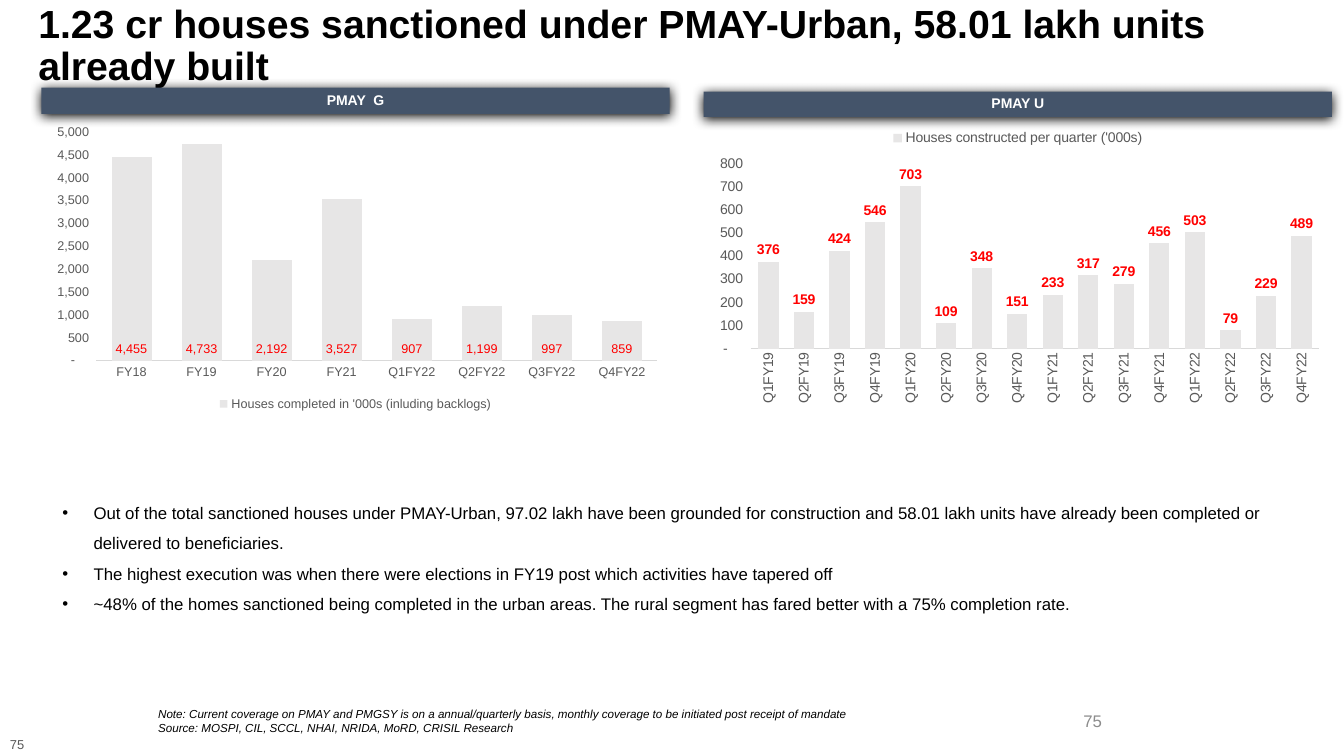
"""Builds the housing progress slide with two column charts and a commentary."""
from dataclasses import dataclass

from lxml import etree
from pptx import Presentation
from pptx import util as u
from pptx.chart.data import CategoryChartData
from pptx.dml.color import RGBColor
from pptx.enum import chart as ch, shapes, text
from pptx.oxml.ns import qn


@dataclass(frozen=True)
class Theme:
    font: str = "Arial"
    ink: str = "000000"
    white: str = "FFFFFF"
    muted: str = "595959"
    pale: str = "8C8C8C"
    banner: str = "44546A"
    column: str = "E7E6E6"
    axis: str = "D9D9D9"
    value: str = "FF0000"
    title_size: float = 28
    body_size: float = 12
    label_size: float = 10
    small_size: float = 9
    corner_size: float = 9.2
    note_size: float = 8.3


@dataclass(frozen=True)
class Area:
    """Left, top, width and height in percent of the slide."""
    left: float
    top: float
    width: float
    height: float

    def lengths(self) -> tuple[int, int, int, int]:
        return (int(WIDTH * self.left / 100), int(HEIGHT * self.top / 100),
                int(WIDTH * self.width / 100), int(HEIGHT * self.height / 100))


@dataclass(frozen=True)
class Style:
    size: float
    color: str
    bold: bool = False
    italic: bool = False


@dataclass(frozen=True)
class TextBlock:
    area: Area
    lines: tuple[str, ...]
    style: Style
    align: text.PP_ALIGN = text.PP_ALIGN.LEFT
    anchor: text.MSO_ANCHOR = text.MSO_ANCHOR.TOP
    wrap: bool = True
    bulleted: bool = False


@dataclass(frozen=True)
class Scheme:
    """One housing scheme: its banner and its column chart."""
    name: str
    banner: Area
    plot: Area
    series: str
    houses: dict[str, int]
    maximum: int
    step: int
    number_format: str
    legend: ch.XL_LEGEND_POSITION
    labels: ch.XL_LABEL_POSITION
    axis_style: Style
    label_style: Style
    rotation: int


THEME = Theme()
WIDTH, HEIGHT = u.Inches(13.33), u.Inches(7.5)
LEFT_COLUMN, RIGHT_COLUMN, COLUMN_WIDTH = 3.08, 52.36, 46.74
CHART_TOP = 15.73
HANGING = u.Inches(0.31)

TITLE = TextBlock(
    Area(2.85, -10.93, 93.92, 34.27),
    ("1.23 cr houses sanctioned under PMAY-Urban, 58.01 lakh units already built",),
    Style(THEME.title_size, THEME.ink, bold=True), anchor=text.MSO_ANCHOR.MIDDLE)

QUARTERS = [f"Q{quarter}FY{year}" for year in range(19, 23) for quarter in range(1, 5)]
RURAL_PERIODS = ["FY18", "FY19", "FY20", "FY21", *QUARTERS[-4:]]

SCHEMES = (
    Scheme("PMAY U", Area(RIGHT_COLUMN, 12.13, COLUMN_WIDTH, 3.33),
           Area(RIGHT_COLUMN, CHART_TOP, COLUMN_WIDTH, 38.4),
           "Houses constructed per quarter ('000s)",
           dict(zip(QUARTERS, (376, 159, 424, 546, 703, 109, 348, 151,
                               233, 317, 279, 456, 503, 79, 229, 489))),
           800, 100, '_(* #,##0_);_(* \\(#,##0\\);_(* "-"??_);_(',
           ch.XL_LEGEND_POSITION.TOP, ch.XL_LABEL_POSITION.OUTSIDE_END,
           Style(THEME.label_size, THEME.muted),
           Style(THEME.label_size, THEME.value, bold=True), -90),
    Scheme("PMAY  G", Area(LEFT_COLUMN, 11.6, COLUMN_WIDTH, 3.47),
           Area(LEFT_COLUMN, CHART_TOP, COLUMN_WIDTH, 39.2),
           "Houses completed in '000s (inluding backlogs)",
           dict(zip(RURAL_PERIODS, (4455, 4733, 2192, 3527, 907, 1199, 997, 859))),
           5000, 500, '_ * #,##0_ ;_ * \\-#,##0_ ;_ * "-"??_ ;_ ',
           ch.XL_LEGEND_POSITION.BOTTOM, ch.XL_LABEL_POSITION.INSIDE_BASE,
           Style(THEME.small_size, THEME.muted),
           Style(THEME.small_size, THEME.value), 0),
)

TEXT_BLOCKS = (
    TextBlock(Area(0, 96.8, 2.7, 3.47), ("75",),
              Style(THEME.corner_size, THEME.muted), wrap=False),
    TextBlock(Area(60.24, 92.67, 22.5, 5.33), ("75",),
              Style(THEME.body_size, THEME.pale), text.PP_ALIGN.RIGHT, text.MSO_ANCHOR.MIDDLE),
    TextBlock(Area(11.03, 92.8, 53.71, 5.07),
              ("Note: Current coverage on PMAY and PMGSY is on a annual/quarterly basis, "
               "monthly coverage to be initiated post receipt of mandate",
               "Source: MOSPI, CIL, SCCL, NHAI, NRIDA, MoRD, CRISIL Research"),
              Style(THEME.note_size, THEME.ink, italic=True), wrap=False),
    TextBlock(Area(3.9, 64.53, 95.2, 17.07),
              ("Out of the total sanctioned houses under PMAY-Urban, 97.02 lakh have been grounded "
               "for construction and 58.01 lakh units have already been completed or delivered "
               "to beneficiaries.",
               "The highest execution was when there were elections in FY19 post which activities "
               "have tapered off",
               "~48% of the homes sanctioned being completed in the urban areas. The rural segment "
               "has fared better with a 75% completion rate."),
              Style(THEME.body_size, THEME.ink), bulleted=True),
)


def apply_style(font, style: Style) -> None:
    font.name, font.size = THEME.font, u.Pt(style.size)
    font.bold, font.italic = style.bold, style.italic
    font.color.rgb = RGBColor.from_string(style.color)


def add_bullet(paragraph) -> None:
    properties = paragraph._p.get_or_add_pPr()
    properties.set("marL", str(HANGING))
    properties.set("indent", str(-HANGING))
    etree.SubElement(properties, qn("a:buFont"), typeface=THEME.font)
    etree.SubElement(properties, qn("a:buChar"), char="•")


def write(frame, block: TextBlock, spacing: float = 1.0) -> None:
    frame.text = "\n".join(block.lines)
    frame.word_wrap, frame.vertical_anchor = block.wrap, block.anchor
    frame.auto_size = text.MSO_AUTO_SIZE.NONE if block.wrap else text.MSO_AUTO_SIZE.SHAPE_TO_FIT_TEXT
    for paragraph in frame.paragraphs:
        if block.bulleted:
            add_bullet(paragraph)
        paragraph.alignment, paragraph.line_spacing = block.align, spacing
        for run in paragraph.runs:
            apply_style(run.font, block.style)


def add_title(slide) -> None:
    title = slide.shapes.title
    title.left, title.top, title.width, title.height = TITLE.area.lengths()
    frame = title.text_frame
    frame.margin_left = frame.margin_right = frame.margin_top = frame.margin_bottom = 0
    write(frame, TITLE, 0.9)


def add_banner(slide, scheme: Scheme) -> None:
    banner = slide.shapes.add_shape(shapes.MSO_SHAPE.RECTANGLE, *scheme.banner.lengths())
    banner.fill.solid()
    banner.fill.fore_color.rgb = RGBColor.from_string(THEME.banner)
    banner.line.fill.background()
    banner.shadow.inherit = False
    effects = banner._element.spPr.find(qn("a:effectLst"))
    shadow = etree.SubElement(effects, qn("a:outerShdw"), blurRad=str(u.Pt(8.5)),
                              dist=str(u.Pt(1)), dir="5400000", algn="t", rotWithShape="0")
    etree.SubElement(shadow, qn("a:srgbClr"), val=THEME.ink)
    write(banner.text_frame, TextBlock(
        scheme.banner, (scheme.name,), Style(THEME.label_size, THEME.white, bold=True),
        text.PP_ALIGN.CENTER, text.MSO_ANCHOR.MIDDLE), 0.9)


def add_scheme_chart(slide, scheme: Scheme) -> None:
    data = CategoryChartData(number_format="#,##0")
    data.categories = list(scheme.houses)
    data.add_series(scheme.series, list(scheme.houses.values()))
    chart = slide.shapes.add_chart(
        ch.XL_CHART_TYPE.COLUMN_CLUSTERED, *scheme.plot.lengths(), data).chart
    apply_style(chart.font, Style(THEME.label_size, THEME.ink))
    chart.has_title, chart.has_legend = False, True
    chart.legend.position, chart.legend.include_in_layout = scheme.legend, False
    apply_style(chart.legend.font, scheme.axis_style)

    periods, houses = chart.category_axis, chart.value_axis
    for axis in (periods, houses):
        axis.major_tick_mark = axis.minor_tick_mark = ch.XL_TICK_MARK.NONE
        axis.has_major_gridlines = False
        apply_style(axis.tick_labels.font, scheme.axis_style)
    periods.format.line.color.rgb = RGBColor.from_string(THEME.axis)
    periods.format.line.width = u.Pt(0.75)
    periods._element.txPr.bodyPr.set("rot", str(scheme.rotation * 60000))
    houses.format.line.fill.background()
    houses.minimum_scale, houses.maximum_scale, houses.major_unit = 0, scheme.maximum, scheme.step

    plot = chart.plots[0]
    plot.gap_width, plot.vary_by_categories, plot.has_data_labels = 75, False, True
    columns = plot.series[0].format.fill
    columns.solid()
    columns.fore_color.rgb = RGBColor.from_string(THEME.column)
    plot.data_labels.show_value, plot.data_labels.position = True, scheme.labels
    apply_style(plot.data_labels.font, scheme.label_style)
    for numbers in (houses.tick_labels, plot.data_labels):
        numbers.number_format, numbers.number_format_is_linked = scheme.number_format, False


def main() -> None:
    deck = Presentation()
    deck.slide_width, deck.slide_height = WIDTH, HEIGHT
    slide = deck.slides.add_slide(deck.slide_layouts[5])
    add_title(slide)
    for scheme in SCHEMES:
        add_banner(slide, scheme)
        add_scheme_chart(slide, scheme)
    for block in TEXT_BLOCKS:
        box = slide.shapes.add_textbox(*block.area.lengths())
        write(box.text_frame, block, 1.5 if block.bulleted else 1.0)
    deck.save("out.pptx")


if __name__ == "__main__":
    main()
